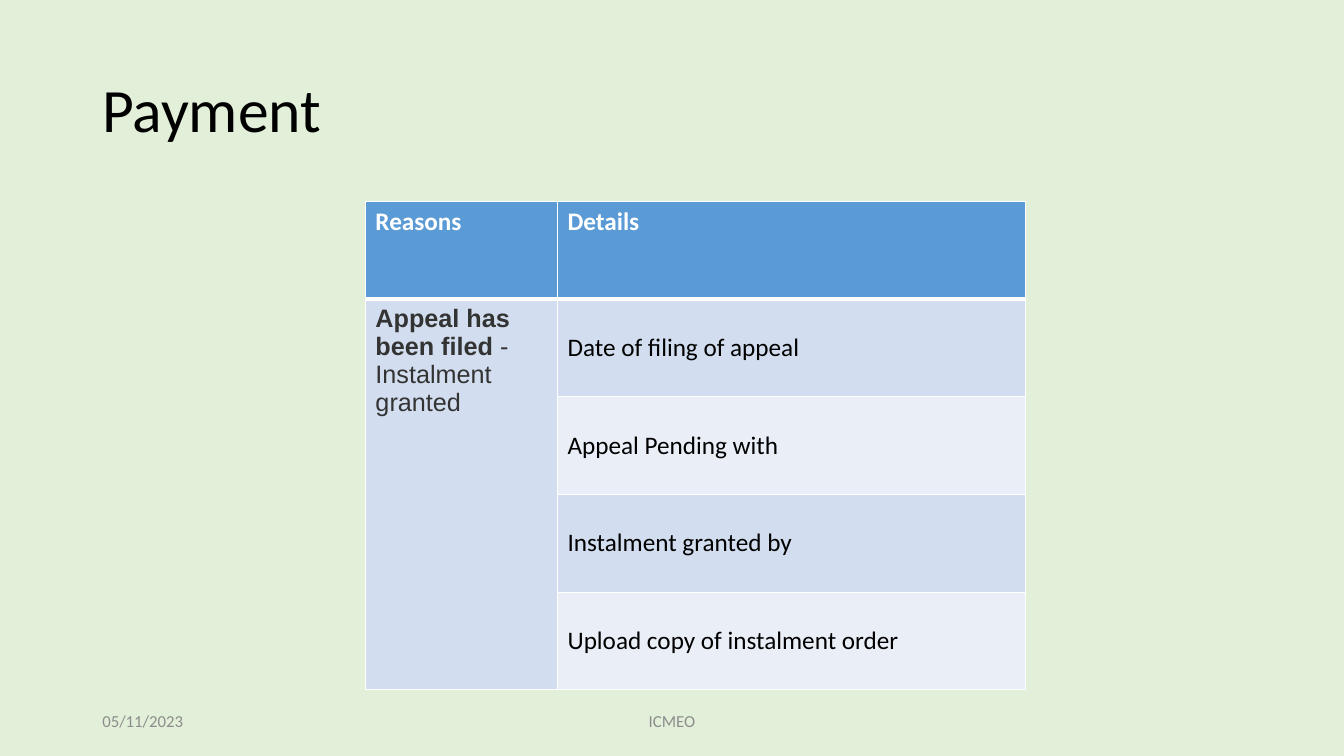
from dataclasses import dataclass

from lxml.etree import SubElement
from pptx import Presentation
from pptx.dml.color import RGBColor
from pptx.enum.text import MSO_ANCHOR, PP_ALIGN
from pptx.oxml.ns import qn
from pptx.slide import Slide
from pptx.table import Table, _Cell
from pptx.text.text import _Paragraph
from pptx.util import Emu, Pt

EMU_PER_PX = 9525
COLORS = {
    "background": "E2F0D9",
    "header": "5B9BD5",
    "band_dark": "D2DEEF",
    "band_light": "EAEFF7",
    "white": "FFFFFF",
    "black": "000000",
    "reason": "333333",
    "footer": "8C8C8C",
}
TABLE_LEFT, TABLE_TOP = 348, 192
COLUMN_WIDTHS = [183, 446]
ROW_HEIGHT = 93
HEADERS = ["Reasons", "Details"]
DETAILS = [
    "Date of filing of appeal",
    "Appeal Pending with",
    "Instalment granted by",
    "Upload copy of instalment order",
]


@dataclass(frozen=True)
class Label:
    text: str
    left: int
    top: int
    width: int
    height: int
    size: int
    color: str
    align: PP_ALIGN = PP_ALIGN.LEFT
    line_spacing: float = 1.0


LABELS = [
    Label("Payment", 88, 38, 1104, 139, 44, "black", line_spacing=0.9),
    Label("05/11/2023", 88, 667, 288, 38, 12, "footer"),
    Label("ICMEO", 424, 667, 432, 38, 12, "footer", PP_ALIGN.CENTER),
]


def px(length: int) -> Emu:
    return Emu(length * EMU_PER_PX)


def rgb(name: str) -> RGBColor:
    return RGBColor.from_string(COLORS[name])


def add_text(paragraph: _Paragraph, text: str, *, size: int = 18, color: str = "black",
             font: str = "Calibri", bold: bool = False) -> None:
    run = paragraph.add_run()
    run.text = text
    run.font.size = Pt(size)
    run.font.name = font
    run.font.bold = bold
    run.font.color.rgb = rgb(color)


def add_label(slide: Slide, label: Label) -> None:
    shape = slide.shapes.add_textbox(
        px(label.left), px(label.top), px(label.width), px(label.height))
    frame = shape.text_frame
    frame.word_wrap = True
    frame.vertical_anchor = MSO_ANCHOR.MIDDLE
    paragraph = frame.paragraphs[0]
    paragraph.alignment = label.align
    paragraph.line_spacing = label.line_spacing
    add_text(paragraph, label.text, size=label.size, color=label.color)


def style_cell(cell: _Cell, fill: str, *, top: int = 1, bottom: int = 1) -> None:
    properties = cell._tc.get_or_add_tcPr()
    for side, width in {"lnL": 1, "lnR": 1, "lnT": top, "lnB": bottom}.items():
        line = SubElement(properties, qn(f"a:{side}"), w=str(Pt(width)))
        solid = SubElement(line, qn("a:solidFill"))
        SubElement(solid, qn("a:srgbClr"), val=COLORS["white"])
    cell.fill.solid()
    cell.fill.fore_color.rgb = rgb(fill)


def fill_header(table: Table) -> None:
    for column, header in enumerate(HEADERS):
        cell = table.cell(0, column)
        style_cell(cell, "header", bottom=3)
        add_text(cell.text_frame.paragraphs[0], header, color="white", bold=True)


def fill_body(table: Table) -> None:
    for row, detail in enumerate(DETAILS, start=1):
        top = 3 if row == 1 else 1
        style_cell(table.cell(row, 0), "band_dark", top=top)
        cell = table.cell(row, 1)
        style_cell(cell, "band_dark" if row % 2 else "band_light", top=top)
        cell.vertical_anchor = MSO_ANCHOR.MIDDLE
        add_text(cell.text_frame.paragraphs[0], detail)
    reason = table.cell(1, 0)
    reason.merge(table.cell(len(DETAILS), 0))
    paragraph = reason.text_frame.paragraphs[0]
    add_text(paragraph, "Appeal has been filed ", color="reason", font="Arial", bold=True)
    add_text(paragraph, "- Instalment granted", color="reason", font="Arial")


def add_payment_table(slide: Slide) -> None:
    row_count = len(DETAILS) + 1
    table = slide.shapes.add_table(
        row_count, len(COLUMN_WIDTHS), px(TABLE_LEFT), px(TABLE_TOP),
        px(sum(COLUMN_WIDTHS)), px(ROW_HEIGHT * row_count)).table
    for column, width in zip(table.columns, COLUMN_WIDTHS):
        column.width = px(width)
    for row in table.rows:
        row.height = px(ROW_HEIGHT)
    fill_header(table)
    fill_body(table)


def main() -> None:
    presentation = Presentation()
    presentation.slide_width, presentation.slide_height = px(1280), px(720)
    slide = presentation.slides.add_slide(presentation.slide_layouts[6])
    slide.background.fill.solid()
    slide.background.fill.fore_color.rgb = rgb("background")
    add_payment_table(slide)
    for label in LABELS:
        add_label(slide, label)
    presentation.save("out.pptx")


if __name__ == "__main__":
    main()
